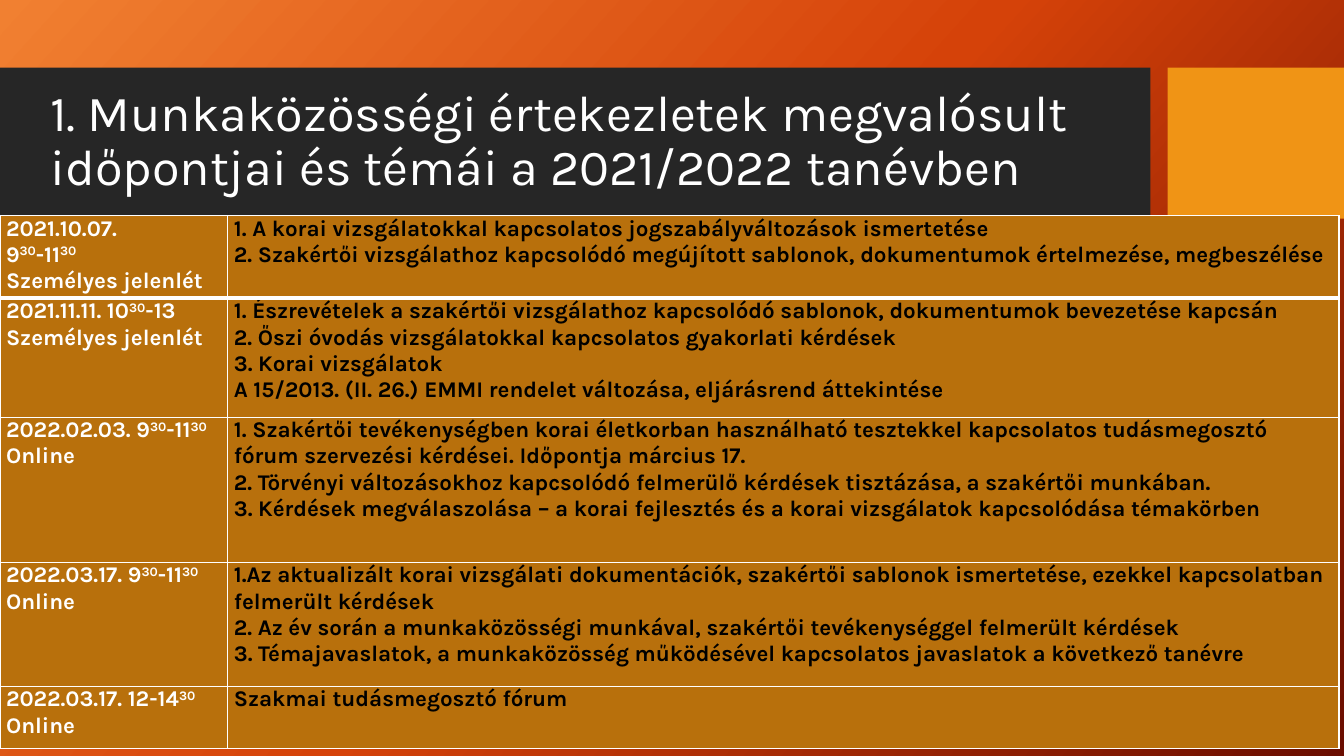
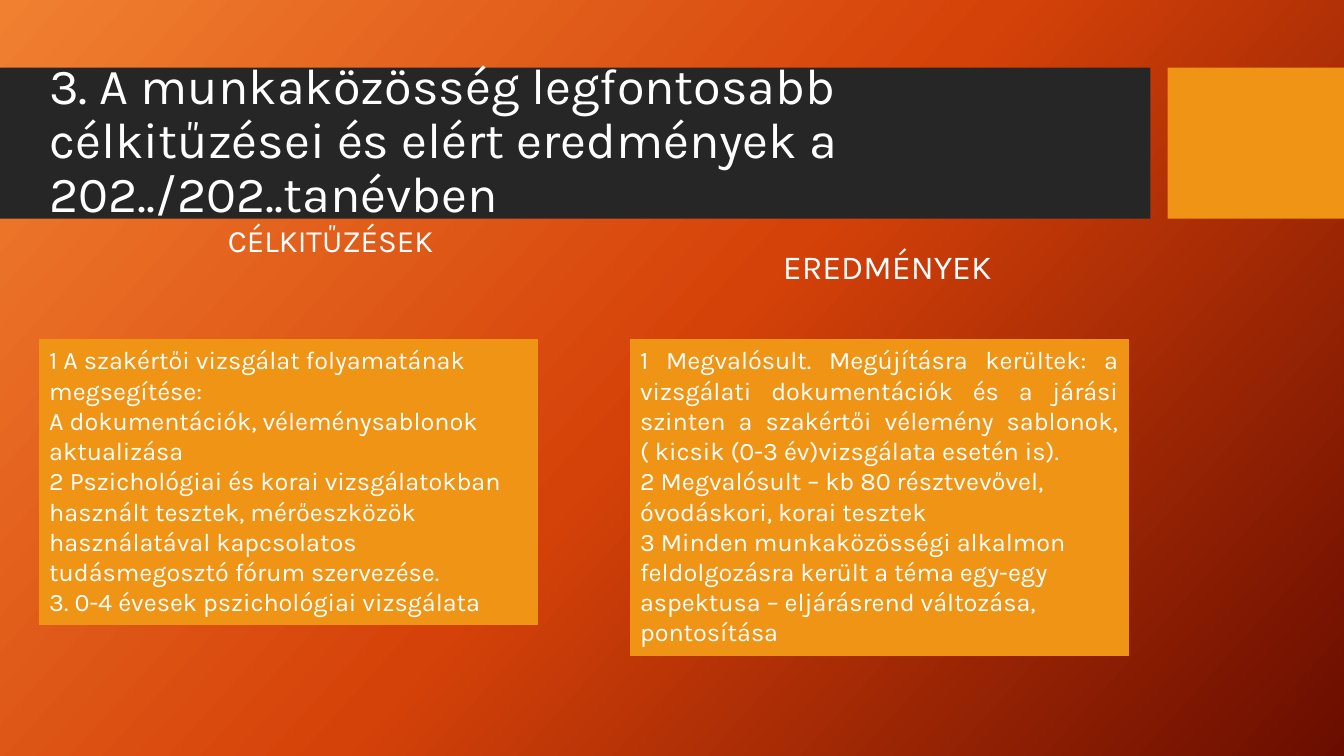
from copy import deepcopy

from lxml import etree
from pptx import Presentation
from pptx.dml.color import RGBColor
from pptx.enum.shapes import MSO_SHAPE
from pptx.enum.text import MSO_ANCHOR, MSO_AUTO_SIZE, PP_ALIGN
from pptx.oxml.ns import qn
from pptx.util import Inches, Pt


class Theme:
    font = "Karla"
    white = RGBColor.from_string("FFFFFF")
    black = RGBColor.from_string("000000")
    band = RGBColor.from_string("262626")
    accent = RGBColor.from_string("F09415")
    cell = RGBColor.from_string("B8700C")
    gradient = [(0, "F18031"), (0.5, "D54209"), (1, "6A0D00")]
    title_size = 36
    panel_size = 18
    table_size = 16


def write_text(frame, paragraphs, size, color=Theme.white, bold=False, align=PP_ALIGN.LEFT,
               first_align=None, line_spacing=None, anchor=MSO_ANCHOR.TOP):
    """Fill a text frame; parts between ^ marks are superscript."""
    frame.word_wrap = True
    frame.vertical_anchor = anchor
    for index, text in enumerate(paragraphs):
        paragraph = frame.paragraphs[0] if index == 0 else frame.add_paragraph()
        paragraph.alignment = first_align if index == 0 and first_align else align
        if line_spacing:
            paragraph.line_spacing = line_spacing
        for part_number, part in enumerate(text.split("^")):
            if not part:
                continue
            run = paragraph.add_run()
            run.text = part
            run.font.name = Theme.font
            run.font.size = Pt(size)
            run.font.bold = bold
            run.font.color.rgb = color
            if part_number % 2:
                run.font._element.set("baseline", "30000")


def add_titled_slide(title, left, top, width, height):
    """Add a slide with the dark title band and the accent block."""
    slide = presentation.slides.add_slide(presentation.slide_layouts[6])
    for band_left, band_width, color in [(0, 11.41, Theme.band), (11.58, 1.75, Theme.accent)]:
        band = slide.shapes.add_shape(MSO_SHAPE.RECTANGLE, Inches(band_left), Inches(0.67),
                                      Inches(band_width), Inches(1.5))
        band.shadow.inherit = False
        band.fill.solid()
        band.fill.fore_color.rgb = color
        band.line.fill.background()
    title_box = slide.shapes.add_textbox(Inches(left), Inches(top), Inches(width), Inches(height))
    write_text(title_box.text_frame, [title], Theme.title_size, line_spacing=0.9,
               anchor=MSO_ANCHOR.MIDDLE)
    return slide


presentation = Presentation()
presentation.slide_width = Inches(13.33)
presentation.slide_height = Inches(7.5)

# Shared gradient background
background_fill = presentation.slide_master.background.fill
background_fill.gradient()
background_fill.gradient_angle = 318
stop_list = background_fill._fill._gradFill.find(qn("a:gsLst"))
stop_list.insert(1, deepcopy(stop_list[0]))
for stop, (position, color) in zip(background_fill.gradient_stops, Theme.gradient):
    stop.position = position
    stop.color.rgb = RGBColor.from_string(color)

# Slide 1: meeting dates and topics
slide = add_titled_slide(
    "1. Munkaközösségi értekezletek megvalósult időpontjai és témái a 2021/2022 tanévben",
    0.4, 0.82, 11.02, 1.18)

meetings = [
    (0.82, ["2021.10.07.", "9^30^-11^30^", "Személyes jelenlét"],
     ["1. A korai vizsgálatokkal kapcsolatos jogszabályváltozások ismertetése",
      "2. Szakértői vizsgálathoz kapcsolódó megújított sablonok, dokumentumok értelmezése, "
      "megbeszélése"]),
    (1.18, ["2021.11.11. 10^30^-13", "Személyes jelenlét"],
     ["1. Észrevételek a szakértői vizsgálathoz kapcsolódó sablonok, dokumentumok bevezetése "
      "kapcsán",
      "2. Őszi óvodás vizsgálatokkal kapcsolatos gyakorlati kérdések",
      "3. Korai vizsgálatok",
      "A 15/2013. (II. 26.) EMMI rendelet változása, eljárásrend áttekintése"]),
    (1.44, ["2022.02.03. 9^30^-11^30^", "Online"],
     ["1. Szakértői tevékenységben korai életkorban használható tesztekkel kapcsolatos "
      "tudásmegosztó fórum szervezési kérdései. Időpontja március 17.",
      "2. Törvényi változásokhoz kapcsolódó felmerülő kérdések tisztázása, a szakértői munkában.",
      "3. Kérdések megválaszolása – a korai fejlesztés és a korai vizsgálatok kapcsolódása "
      "témakörben"]),
    (1.23, ["2022.03.17. 9^30^-11^30^", "Online"],
     ["1.Az aktualizált korai vizsgálati dokumentációk, szakértői sablonok ismertetése, ezekkel "
      "kapcsolatban felmerült kérdések",
      "2. Az év során a munkaközösségi munkával, szakértői tevékenységgel felmerült kérdések",
      "3. Témajavaslatok, a munkaközösség működésével kapcsolatos javaslatok a következő "
      "tanévre"]),
    (0.62, ["2022.03.17. 12-14^30^", "Online"], ["Szakmai tudásmegosztó fórum"]),
]
table = slide.shapes.add_table(len(meetings), 2, Inches(0), Inches(2.14),
                               Inches(13.28), Inches(5.29)).table
table.columns[0].width = Inches(2.26)
table.columns[1].width = Inches(11.02)

for row_index, (height, date_lines, topics) in enumerate(meetings):
    table.rows[row_index].height = Inches(height)
    for column_index, (lines, color) in enumerate([(date_lines, Theme.white),
                                                   (topics, Theme.black)]):
        cell = table.cell(row_index, column_index)
        cell.margin_left = cell.margin_right = Inches(0.06)
        cell.margin_top = cell.margin_bottom = 0
        write_text(cell.text_frame, lines, Theme.table_size, color=color, bold=True)
        # Cell borders come before the fill; a heavier rule follows the first row
        properties = cell._tc.get_or_add_tcPr()
        for side in ["lnL", "lnR", "lnT", "lnB"]:
            heavy = (row_index, side) in [(0, "lnB"), (1, "lnT")]
            border = etree.SubElement(properties, qn(f"a:{side}"), w=str(Pt(3 if heavy else 1)))
            border_fill = etree.SubElement(border, qn("a:solidFill"))
            etree.SubElement(border_fill, qn("a:srgbClr"), val=str(Theme.white))
        cell.fill.solid()
        cell.fill.fore_color.rgb = Theme.cell

# Slide 2: goals and results
slide = add_titled_slide(
    "3. A munkaközösség legfontosabb célkitűzései és elért eredmények a 202../202..tanévben",
    0.39, 0.9, 10.8, 1.02)

# Column headings
headings = [
    ("CÉLKITŰZÉSEK", 1.53, 2.25, 0.63, 22.2, 0.7),
    ("EREDMÉNYEK", 7.05, 2.47, 0.5, 24, 0.8),
]
for text, left, top, height, size, spacing in headings:
    heading = slide.shapes.add_textbox(Inches(left), Inches(top), Inches(3.5), Inches(height))
    write_text(heading.text_frame, [text], size, align=PP_ALIGN.CENTER, line_spacing=spacing)

# Column panels
panels = [
    (0.39, 2.83, PP_ALIGN.LEFT,
     ["1 A szakértői vizsgálat folyamatának megsegítése:",
      "A dokumentációk, véleménysablonok aktualizása",
      "2 Pszichológiai és korai vizsgálatokban használt tesztek, mérőeszközök használatával "
      "kapcsolatos tudásmegosztó fórum szervezése.",
      "3. 0-4 évesek pszichológiai vizsgálata"]),
    (6.25, 3.13, PP_ALIGN.JUSTIFY,
     ["1 Megvalósult. Megújításra kerültek: a vizsgálati dokumentációk és a járási szinten a "
      "szakértői vélemény sablonok, ( kicsik (0-3 év)vizsgálata esetén is).",
      "2 Megvalósult – kb 80 résztvevővel, óvodáskori, korai tesztek",
      "3 Minden munkaközösségi alkalmon feldolgozásra került a téma egy-egy aspektusa – "
      "eljárásrend változása, pontosítása"]),
]
for left, height, first_align, lines in panels:
    panel = slide.shapes.add_shape(MSO_SHAPE.RECTANGLE, Inches(left), Inches(3.37),
                                   Inches(4.94), Inches(height))
    panel.shadow.inherit = False
    panel.fill.solid()
    panel.fill.fore_color.rgb = Theme.accent
    panel.line.color.rgb = Theme.accent
    panel.line.width = Pt(0.75)
    write_text(panel.text_frame, lines, Theme.panel_size, first_align=first_align)
    panel.text_frame.auto_size = MSO_AUTO_SIZE.SHAPE_TO_FIT_TEXT

presentation.save("out.pptx")
